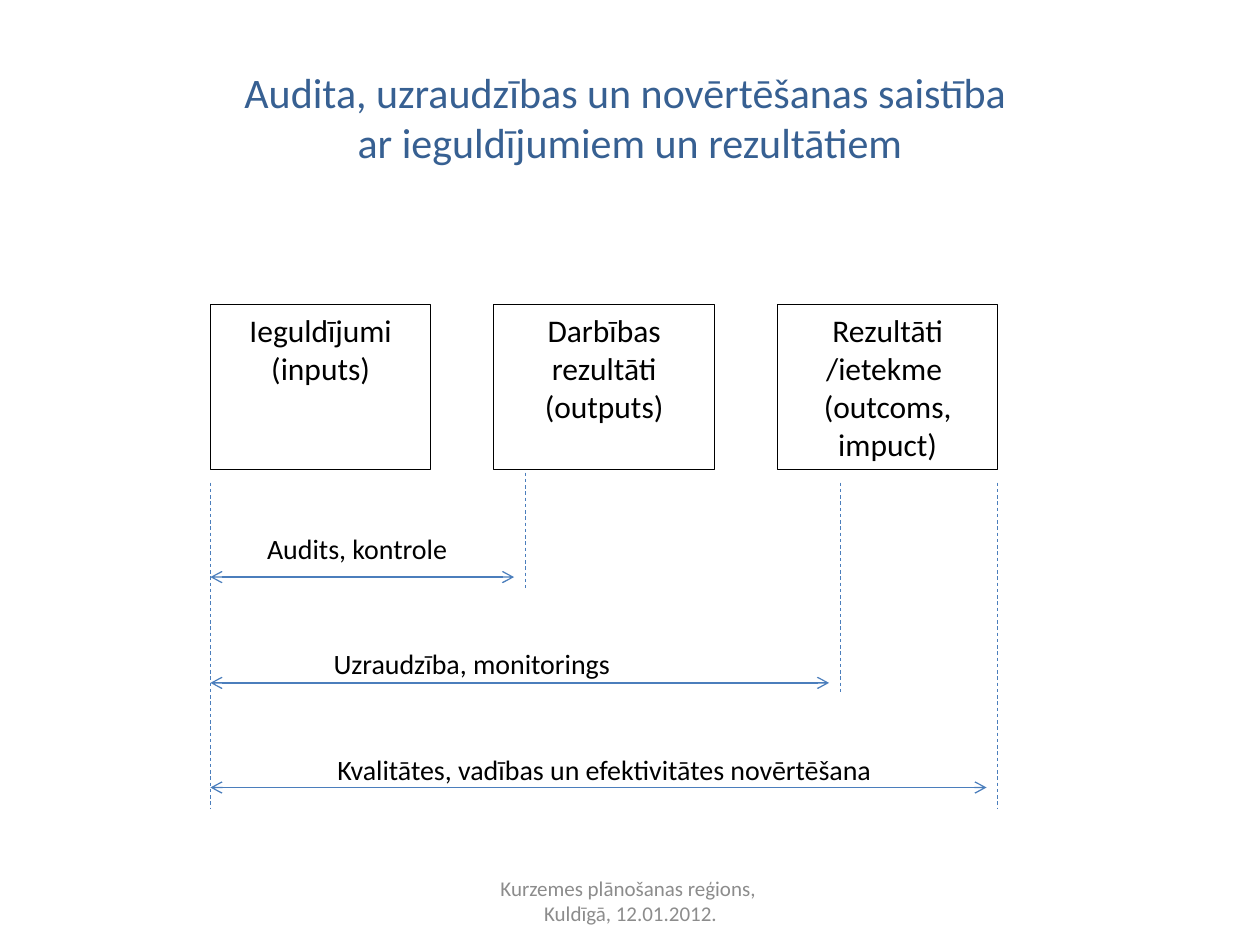
from dataclasses import dataclass

from lxml.etree import SubElement
from pptx import Presentation
from pptx.dml.color import RGBColor
from pptx.enum.dml import MSO_LINE
from pptx.enum.shapes import MSO_CONNECTOR, MSO_SHAPE
from pptx.enum.text import MSO_ANCHOR, PP_ALIGN
from pptx.oxml.ns import qn
from pptx.util import Inches, Pt

COLORS = {"title": "376092", "text": "000000", "line": "4B7EBC", "footer": "8C8C8C"}
FONT = "Calibri"


@dataclass
class Label:
    left: float
    top: float
    width: float
    height: float
    lines: list[str]
    size: int = 16
    color: str = "text"
    align: PP_ALIGN = PP_ALIGN.CENTER
    anchor: MSO_ANCHOR = MSO_ANCHOR.TOP


@dataclass
class Line:
    start: tuple[float, float]
    end: tuple[float, float]


def write_text(shape, label: Label) -> None:
    frame = shape.text_frame
    frame.word_wrap = True
    frame.vertical_anchor = label.anchor
    font_format = {"name": FONT, "size": Pt(label.size)}
    for index, text in enumerate(label.lines):
        paragraph = frame.paragraphs[0] if index == 0 else frame.add_paragraph()
        paragraph.text = text
        paragraph.alignment = label.align
        for span in paragraph.runs:
            for name, value in font_format.items():
                setattr(span.font, name, value)
            span.font.color.rgb = RGBColor.from_string(COLORS[label.color])


def bounds(label: Label) -> list[Inches]:
    return [Inches(n) for n in (label.left, label.top, label.width, label.height)]


def add_label(page, label: Label) -> None:
    write_text(page.shapes.add_textbox(*bounds(label)), label)


def add_stage(page, label: Label) -> None:
    box = page.shapes.add_shape(MSO_SHAPE.RECTANGLE, *bounds(label))
    box.shadow.inherit = False
    box.fill.background()
    box.line.color.rgb = RGBColor.from_string(COLORS["text"])
    box.line.width = Pt(0.5)
    write_text(box, label)


def add_line(page, line: Line, width: float):
    connector = page.shapes.add_connector(
        MSO_CONNECTOR.STRAIGHT, *[Inches(n) for n in line.start + line.end])
    connector.line.color.rgb = RGBColor.from_string(COLORS["line"])
    connector.line.width = Pt(width)
    SubElement(connector._element.spPr, qn("a:effectLst"))
    return connector


def add_guide(page, line: Line) -> None:
    add_line(page, line, 0.5).line.dash_style = MSO_LINE.DASH


def add_span_arrow(page, line: Line) -> None:
    outline = add_line(page, line, 0.75).line._get_or_add_ln()
    for end in ("a:headEnd", "a:tailEnd"):
        SubElement(outline, qn(end), type="arrow")


# Stage boxes stand in one row at an equal pitch
ROW_LEFT, ROW_TOP, PITCH = 1.67, 2.42, 2.25
STAGES = [
    ["Ieguldījumi", "(inputs)"],
    ["Darbības rezultāti", "(outputs)"],
    ["Rezultāti /ietekme ", "(outcoms, impuct)"],
]

# Dashed guides mark where each activity starts and ends
GUIDES = [
    Line((x, top), (x, bottom))
    for x, top, bottom in [(ROW_LEFT, 3.83, 6.42), (6.67, 3.83, 5.5),
                           (7.92, 3.83, 6.42), (4.17, 3.75, 4.67)]
]

# Arrows show how far each activity reaches
ARROWS = [Line((ROW_LEFT, y), (right, y))
          for right, y in [(4.08, 4.58), (6.58, 5.42), (7.83, 6.25)]]

LABELS = [
    Label(0.5, 0.3, 9, 1.25,
          ["Audita, uzraudzības un novērtēšanas saistība \var ieguldījumiem un rezultātiem"],
          24, "title", anchor=MSO_ANCHOR.MIDDLE),
    Label(2, 4.17, 1.67, 0.37, ["Audits, kontrole"]),
    Label(2.08, 5.08, 3.33, 0.37, ["Uzraudzība, monitorings"]),
    Label(2.58, 5.92, 4.58, 0.37, ["Kvalitātes, vadības un efektivitātes novērtēšana"],
          align=PP_ALIGN.LEFT),
    Label(3.42, 6.95, 3.17, 0.4, ["Kurzemes plānošanas reģions, ", "Kuldīgā, 12.01.2012."],
          12, "footer", anchor=MSO_ANCHOR.MIDDLE),
]


def main() -> None:
    deck = Presentation()
    deck.slide_width, deck.slide_height = Inches(10), Inches(7.5)
    page = deck.slides.add_slide(deck.slide_layouts[6])

    for index, lines in enumerate(STAGES):
        add_stage(page, Label(ROW_LEFT + index * PITCH, ROW_TOP, 1.75, 1.31, lines, 18))
    for guide in GUIDES:
        add_guide(page, guide)
    for arrow in ARROWS:
        add_span_arrow(page, arrow)
    for label in LABELS:
        add_label(page, label)

    deck.save("out.pptx")


if __name__ == "__main__":
    main()
